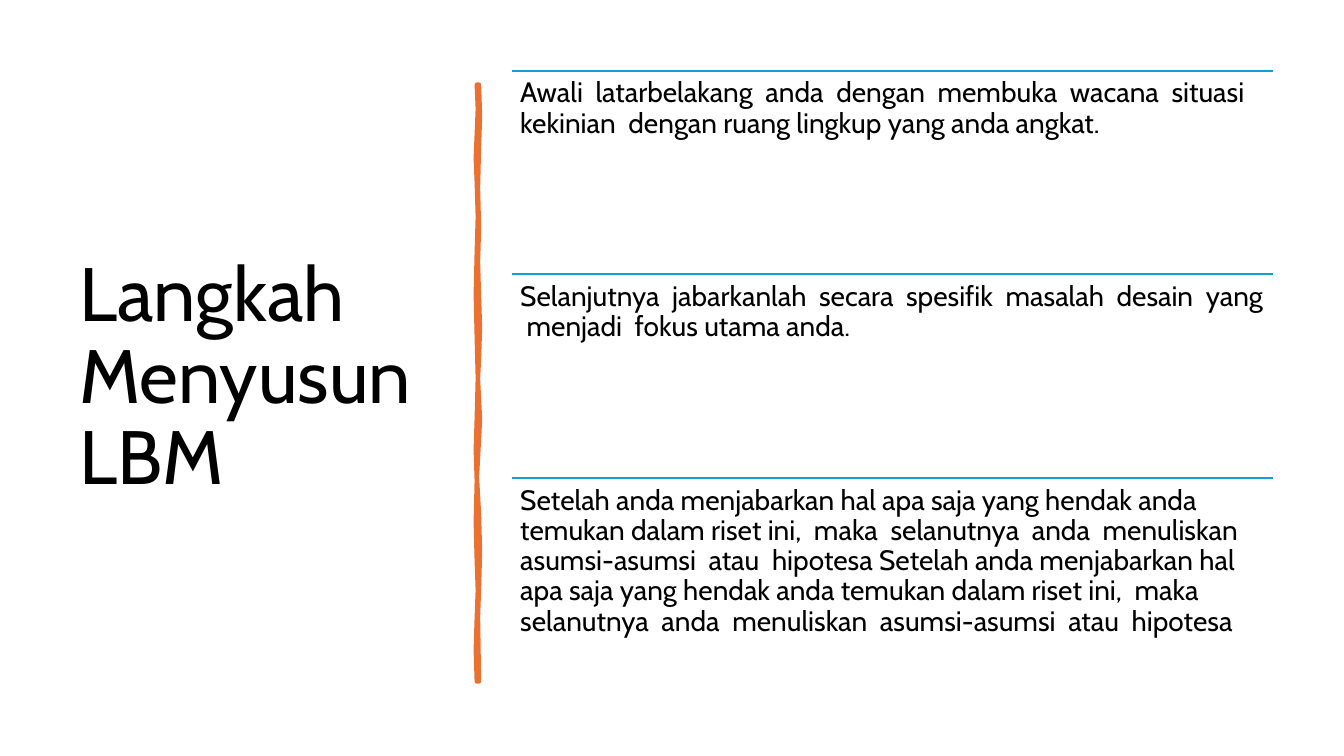
import pptx
import pptx.dml.color
import pptx.enum.shapes
import pptx.enum.text
import pptx.oxml.ns
import pptx.util
from lxml import etree

PX = 9144  # 100 px to the inch
BLACK = pptx.dml.color.RGBColor(0x00, 0x00, 0x00)
ORANGE = pptx.dml.color.RGBColor(0xE9, 0x71, 0x32)
BLUE = pptx.dml.color.RGBColor(0x0F, 0x9E, 0xD5)
ANCHOR = pptx.enum.text.MSO_ANCHOR

TITLE = "Langkah Menyusun LBM"
CLAUSE = ("etelah anda menjabarkan hal apa saja yang hendak anda temukan dalam riset ini,"
          "  maka  selanutnya  anda  menuliskan  asumsi-asumsi  atau  hipotesa")
STEPS = [
    "Awali  latarbelakang  anda  dengan  membuka  wacana  situasi  kekinian"
    "  dengan ruang lingkup yang anda angkat.",
    "Selanjutnya  jabarkanlah  secara  spesifik  masalah  desain  yang"
    "  menjadi  fokus utama anda.",
    f"S{CLAUSE} S{CLAUSE}",
]
STEP_LEFT, STEP_TOP, STEP_WIDTH, STEP_HEIGHT = 508, 70, 755, 202

# Wavy outline of the divider: right edge downwards, left edge upwards
RIGHT_EDGE = [(475, 84), (476, 115), (475, 146), (474, 186), (475, 226), (474, 260),
              (475, 294), (476, 325), (475, 356), (474, 376), (476, 416), (475, 436),
              (473, 473), (475, 510), (476, 547), (475, 584), (474, 612), (475, 676)]
LEFT_EDGE = [(473, 676), (472, 645), (473, 613), (474, 585), (473, 557), (472, 517),
             (473, 477), (472, 446), (473, 415), (474, 375), (473, 335), (472, 292),
             (473, 250), (474, 215), (473, 181), (472, 157), (474, 108), (473, 84)]


def set_all(target, values):
    for name, value in values.items():
        setattr(target, name, value)


def add_text(s, text, box, size, inset, anchor):
    tf = s.shapes.add_textbox(*(v * PX for v in box)).text_frame
    margins = {f"margin_{side}": inset[i % 2] * PX
               for i, side in enumerate(("left", "top", "right", "bottom"))}
    set_all(tf, {"word_wrap": True, "vertical_anchor": anchor, **margins})
    p = tf.paragraphs[0]
    p.line_spacing = 0.9
    r = p.add_run()
    r.text = text
    set_all(r.font, {"name": "Cabin", "size": pptx.util.Pt(size)})
    r.font.color.rgb = BLACK


def add_rule(s, x, y, width):
    line = s.shapes.add_connector(pptx.enum.shapes.MSO_CONNECTOR.STRAIGHT,
                                  x * PX, y * PX, (x + width) * PX, y * PX)
    line.line.color.rgb = BLUE
    line.line.width = pptx.util.Pt(1.5)
    etree.SubElement(line._element.spPr, pptx.oxml.ns.qn("a:effectLst"))


def add_divider(s):
    start, *rest = RIGHT_EDGE + LEFT_EDGE
    builder = s.shapes.build_freeform(*start, scale=PX)
    builder.add_line_segments(rest, close=True)
    sp = builder.convert_to_shape()
    sp.shadow.inherit = False
    sp.fill.solid()
    sp.fill.fore_color.rgb = ORANGE
    sp.line.color.rgb = ORANGE
    sp.line.width = pptx.util.Pt(3.25)


def main():
    prs = pptx.Presentation()
    set_all(prs, {"slide_width": 1333 * PX, "slide_height": 750 * PX})
    s = prs.slides.add_slide(prs.slide_layouts[6])
    add_text(s, TITLE, (69, 70, 374, 611), 54, (10, 5), ANCHOR.MIDDLE)
    add_divider(s)
    for i, step in enumerate(STEPS):
        top = STEP_TOP + i * STEP_HEIGHT
        add_rule(s, STEP_LEFT, top, STEP_WIDTH)
        add_text(s, step, (STEP_LEFT, top, STEP_WIDTH, STEP_HEIGHT), 20, (8, 8), ANCHOR.TOP)
    prs.save("out.pptx")


if __name__ == "__main__":
    main()
